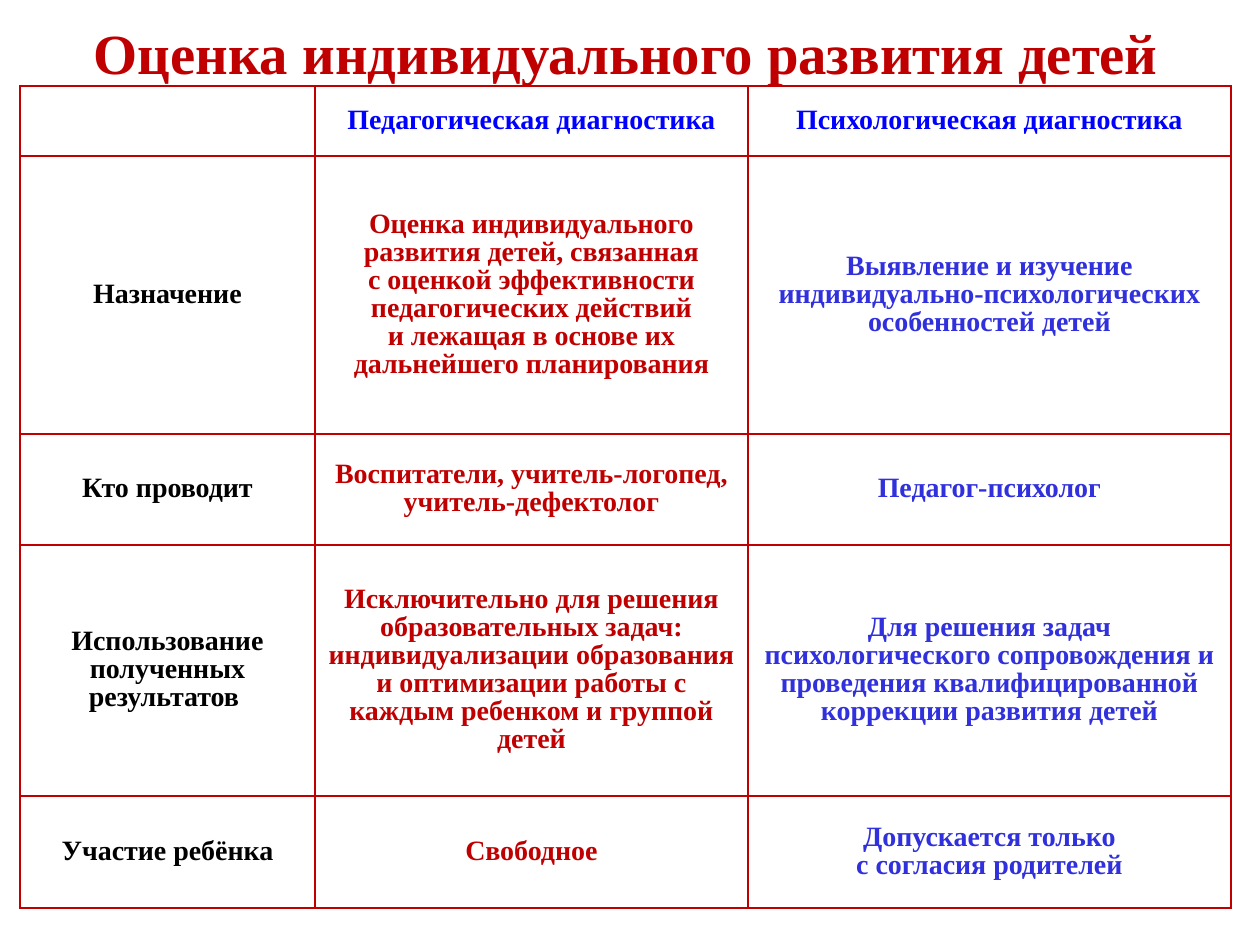
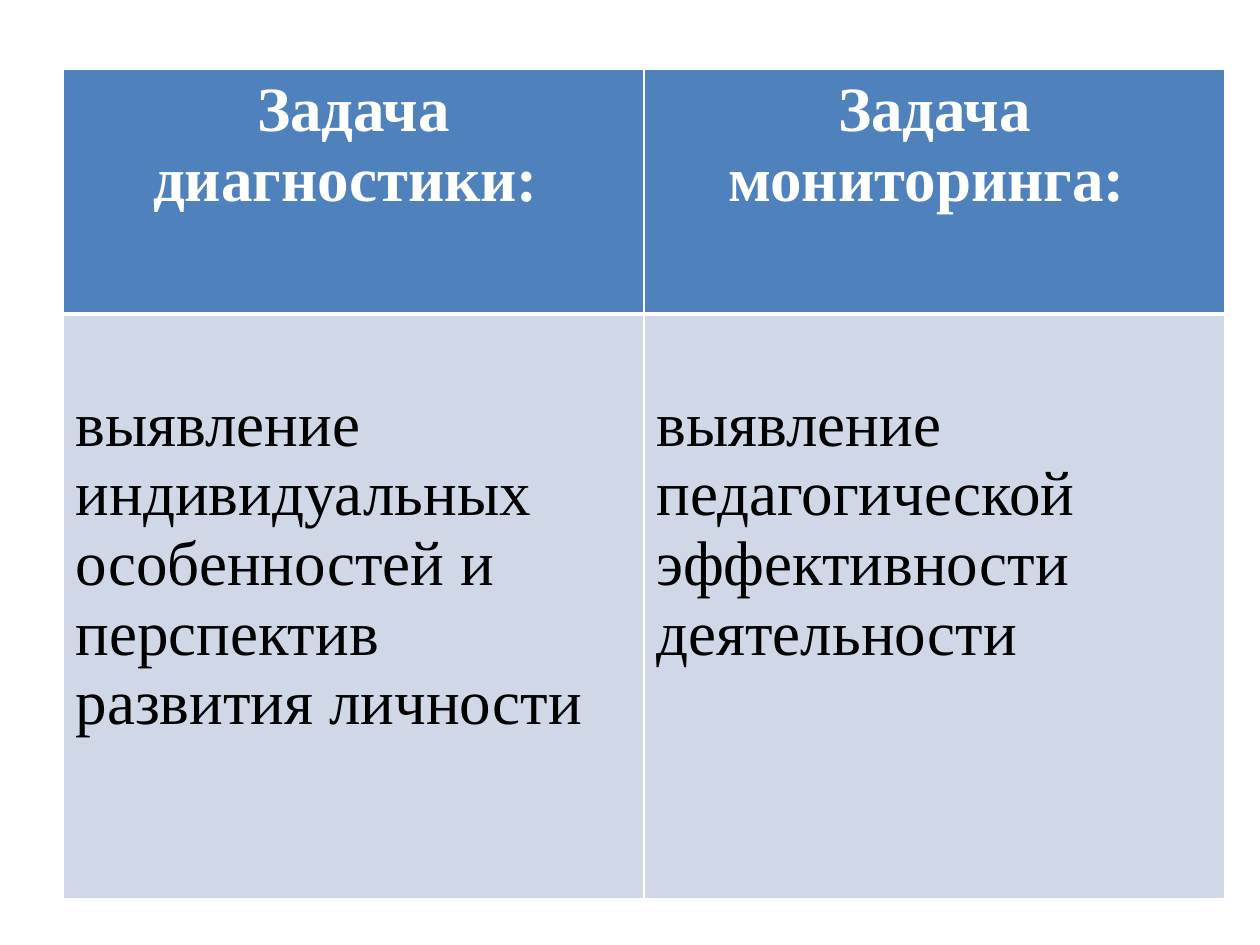
from lxml import etree
from pptx import Presentation
from pptx import util as u
from pptx.dml.color import RGBColor
from pptx.enum import text
from pptx.oxml.ns import qn

# Content
TITLE = "Оценка индивидуального развития детей"
SIDES = [
    ["", "Педагогическая диагностика", "Психологическая диагностика"],
    ["Назначение",
     "Оценка индивидуального развития детей, связанная\v"
     "с оценкой эффективности педагогических действий\v"
     "и лежащая в основе их дальнейшего планирования",
     "Выявление и изучение индивидуально‑психологических особенностей детей"],
    ["Кто проводит", "Воспитатели, учитель-логопед, учитель-дефектолог",
     "Педагог-психолог"],
    ["Использование полученных результатов ",
     "Исключительно для решения образовательных задач:\n"
     "индивидуализации образования и оптимизации работы с "
     "каждым ребенком и группой детей",
     "Для решения задач психологического сопровождения и проведения "
     "квалифицированной коррекции развития детей"],
    ["Участие ребёнка", "Свободное",
     "Допускается только\nс согласия родителей"],
]
TASKS = [
    ["Задача диагностики: ", "Задача мониторинга: "],
    ["выявление индивидуальных особенностей и перспектив развития личности",
     "выявление педагогической эффективности деятельности"],
]

# Shared look
FONT = "Times New Roman"
HUES = {"red": "C00000", "blue": "0000FF", "violet": "3030DC",
        "black": "000000", "white": "FFFFFF", "band": "4F81BD",
        "pale": "D0D8E8"}
ALIGN = text.PP_ALIGN
MIDDLE = text.MSO_ANCHOR.MIDDLE
SCALE = 914400 / 126


def px(n):
    return u.Emu(round(n * SCALE))


def style(frame, size, hue, bold=True, align=ALIGN.CENTER, gap=None):
    for par in frame.paragraphs:
        par.alignment = align
        par.line_spacing = gap
        font = par.font
        font.name, font.size, font.bold = FONT, u.Pt(size), bold
        font.color.rgb = RGBColor.from_string(HUES[hue])


def edge(cell, hue, widths):
    """Draw the left, right, top and bottom borders, widths in points."""
    props = cell._tc.get_or_add_tcPr()
    for i, (side, width) in enumerate(zip("LRTB", widths)):
        line = etree.Element(qn(f"a:ln{side}"), w=str(u.Pt(width)))
        fill = etree.SubElement(line, qn("a:solidFill"))
        etree.SubElement(fill, qn("a:srgbClr"), val=HUES[hue])
        props.insert(i, line)


def grid(slide, left, top, cols, rows, data):
    """Add a plain table and yield each cell with its row and column."""
    table = slide.shapes.add_table(
        len(rows), len(cols), px(left), px(top),
        px(sum(cols)), px(sum(rows))).table
    table.first_row = table.horz_banding = False
    for col, width in zip(table.columns, cols):
        col.width = px(width)
    for row, height in zip(table.rows, rows):
        row.height = px(height)
    for r, line in enumerate(data):
        for c, words in enumerate(line):
            cell = table.cell(r, c)
            cell.text_frame.text = words
            yield r, c, cell


def compare(deck):
    slide = deck.slides.add_slide(deck.slide_layouts[5])
    # Title
    head = slide.shapes.title
    head.left, head.top, head.width, head.height = map(px, (59, 6, 1134, 91))
    head.text_frame.text = TITLE
    head.text_frame.vertical_anchor = MIDDLE
    style(head.text_frame, 32.4, "red")
    # Two kinds of diagnostics, side by side
    cols, rows = (295, 433, 483), (70, 278, 111, 251, 112)
    for r, c, cell in grid(slide, 20, 86, cols, rows, SIDES):
        cell.fill.background()
        cell.vertical_anchor = MIDDLE
        cell.margin_left = cell.margin_right = px(9)
        cell.margin_top = cell.margin_bottom = px(4)
        hue = ("black", "red", "violet")[c] if r else "blue"
        style(cell.text_frame, 16, hue, gap=0.9)
        edge(cell, "red", [1.5] * 4)


def tasks(deck):
    slide = deck.slides.add_slide(deck.slide_layouts[6])
    # Header band above the two tasks
    for r, c, cell in grid(slide, 63, 69, (581, 581), (245, 585), TASKS):
        cell.fill.solid()
        cell.fill.fore_color.rgb = RGBColor.from_string(
            HUES["pale" if r else "band"])
        if r:
            cell.margin_top = px(76)
            align = (ALIGN.LEFT, ALIGN.JUSTIFY)[c]
            style(cell.text_frame, 36, "black", False, align)
        else:
            style(cell.text_frame, 36, "white")
        edge(cell, "white", (1, 1, 3, 1) if r else (1, 1, 1, 3))


def main():
    deck = Presentation()
    deck.slide_width, deck.slide_height = px(1260), px(945)
    compare(deck)
    tasks(deck)
    deck.save("out.pptx")


if __name__ == "__main__":
    main()
